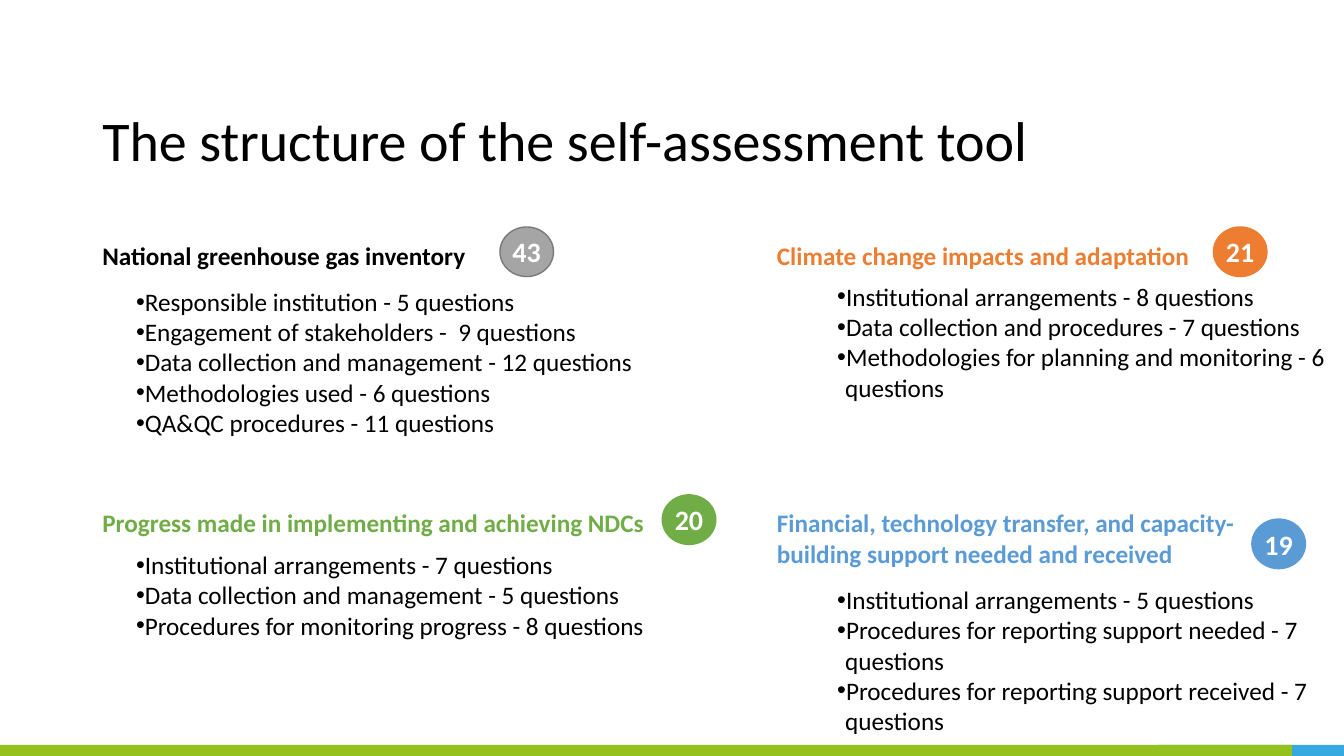
from pptx import Presentation
from pptx.dml.color import RGBColor
from pptx.enum.shapes import MSO_SHAPE as Shape
from pptx.enum.text import MSO_ANCHOR as Anchor, PP_ALIGN as Align
from pptx.oxml.ns import qn
from pptx.util import Cm, Pt
from lxml.etree import SubElement


def color(value):
    return RGBColor.from_string(value)


def add_run(paragraph, text, size, font_color, bold=False):
    run = paragraph.add_run()
    run.text = text
    run.font.name = "Calibri"
    run.font.size = Pt(size)
    run.font.bold = bold
    run.font.color.rgb = color(font_color)


presentation = Presentation()
presentation.slide_width, presentation.slide_height = Cm(33.87), Cm(19.05)
slide = presentation.slides.add_slide(presentation.slide_layouts[6])

# Footer band
for left, width, fill in [(29.17, 4.7, "36A9E0"), (0, 32.56, "95C11E")]:
    band = slide.shapes.add_shape(Shape.RECTANGLE, Cm(left), Cm(18.77), Cm(width), Cm(0.28))
    band.shadow.inherit = False
    band.fill.solid()
    band.fill.fore_color.rgb = color(fill)
    band.line.fill.background()

# Title
title = slide.shapes.add_textbox(Cm(2.33), Cm(2.18), Cm(29.21), Cm(2.87))
title.text_frame.word_wrap = True
title.text_frame.vertical_anchor = Anchor.MIDDLE
paragraph = title.text_frame.paragraphs[0]
paragraph.line_spacing = 0.9
add_run(paragraph, "The structure of the self-assessment tool", 40, "000000")

# Sections: heading and its box, heading color, badge (number, left, top, fill, line), list box, topics
sections = [
    ("National greenhouse gas inventory", (2.33, 5.92, 10.08, 1.02), "000000",
     ("43", 12.6, 5.72, "A5A5A5", "7A7A7A"), (3.18, 7.09, 13.51, 4.11),
     ["Responsible institution - 5 questions",
      "Engagement of stakeholders -  9 questions",
      "Data collection and management - 12 questions",
      "Methodologies used - 6 questions",
      "QA&QC procedures - 11 questions"]),
    ("Progress made in implementing and achieving NDCs", (2.33, 12.67, 14.35, 1.02), "70AD47",
     ("20", 16.69, 12.47, "70AD47", "70AD47"), (3.18, 13.72, 14, 2.57),
     ["Institutional arrangements - 7 questions",
      "Data collection and management - 5 questions",
      "Procedures for monitoring progress - 8 questions"]),
    ("Climate change impacts and adaptation", (19.33, 5.92, 11.56, 1.02), "ED7D31",
     ("21", 30.58, 5.72, "ED7D31", "ED7D31"), (20.85, 6.96, 13.51, 3.33),
     ["Institutional arrangements - 8 questions",
      "Data collection and procedures - 7 questions",
      "Methodologies for planning and monitoring - 6 questions"]),
    ("Financial, technology transfer, and capacity-building support needed and received",
     (19.33, 12.67, 13.06, 1.8), "5B9BD5",
     ("19", 31.55, 13.08, "5B9BD5", "5B9BD5"), (20.85, 14.6, 13.51, 4.11),
     ["Institutional arrangements - 5 questions",
      "Procedures for reporting support needed - 7 questions",
      "Procedures for reporting support received - 7 questions"]),
]

for heading, heading_box, heading_color, badge_data, list_box, topics in sections:
    # Heading
    heading_shape = slide.shapes.add_textbox(*[Cm(length) for length in heading_box])
    heading_shape.text_frame.word_wrap = True
    add_run(heading_shape.text_frame.paragraphs[0], heading, 18, heading_color, bold=True)

    # Badge with the number of questions
    number, left, top, fill, line = badge_data
    badge = slide.shapes.add_shape(Shape.OVAL, Cm(left), Cm(top), Cm(1.35), Cm(1.25))
    badge.shadow.inherit = False
    badge.fill.solid()
    badge.fill.fore_color.rgb = color(fill)
    badge.line.color.rgb = color(line)
    badge.line.width = Pt(1)
    frame = badge.text_frame
    frame.margin_left = frame.margin_right = frame.margin_top = frame.margin_bottom = 0
    frame.vertical_anchor = Anchor.MIDDLE
    frame.paragraphs[0].alignment = Align.CENTER
    add_run(frame.paragraphs[0], number, 20, "FFFFFF", bold=True)

    # Bulleted topics
    topic_list = slide.shapes.add_textbox(*[Cm(length) for length in list_box])
    frame = topic_list.text_frame
    frame.word_wrap = True
    for index, topic in enumerate(topics):
        paragraph = frame.add_paragraph() if index else frame.paragraphs[0]
        properties = paragraph._p.get_or_add_pPr()
        properties.set("marL", str(Cm(0.2)))
        properties.set("indent", str(Cm(-0.51)))
        SubElement(properties, qn("a:buFont"), typeface="Arial")
        SubElement(properties, qn("a:buChar"), char="•")
        add_run(paragraph, topic, 18, "000000")

presentation.save("out.pptx")
